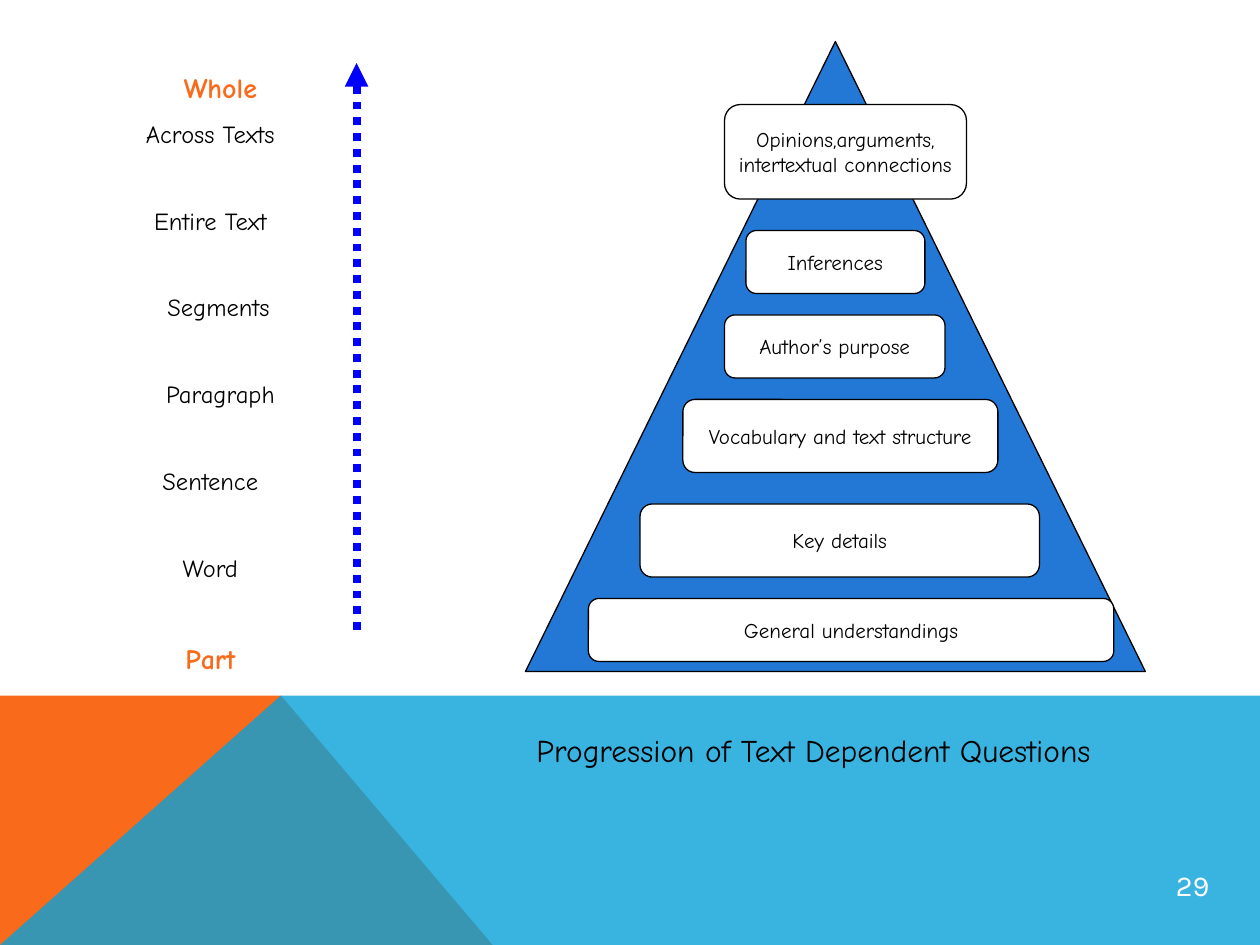
"""Build a slide on the progression of text dependent questions."""
import dataclasses

import pptx
import pptx.dml.color
import pptx.enum.dml
import pptx.enum.shapes
import pptx.enum.text
import pptx.oxml.ns
import pptx.util
from lxml import etree

Inches = pptx.util.Inches
Pt = pptx.util.Pt
SHAPE = pptx.enum.shapes.MSO_SHAPE
ALIGN = pptx.enum.text.PP_ALIGN
MIDDLE = pptx.enum.text.MSO_ANCHOR.MIDDLE


@dataclasses.dataclass(frozen=True)
class Theme:
    """Hold the colours, fonts and type sizes."""
    black: str = "000000"
    white: str = "FFFFFF"
    orange: str = "F96A1B"
    sky: str = "08A1D9"
    blue: str = "2378D5"
    arrow: str = "0000FF"
    hand: str = "Comic Neue"
    sans: str = "Karla"
    small: float = 12
    label: float = 14
    head: float = 16
    page: float = 16.5
    title: float = 18


THEME = Theme()

BOXES = [
    (5.75, 0.83, 1.92, 0.75, ["Opinions,arguments,", "intertextual connections"]),
    (5.92, 1.83, 1.42, 0.5, ["Inferences"]),
    (5.75, 2.5, 1.75, 0.5, ["Author’s purpose"]),
    (5.42, 3.17, 2.5, 0.58, ["Vocabulary and text structure"]),
    (5.08, 4, 3.17, 0.58, ["Key details"]),
    (4.67, 4.75, 4.17, 0.5, ["General understandings"]),
]

LEVELS = [
    ("Whole", 0, 0.16),
    ("Across Texts", 8.6, 0),
    ("Entire Text", 32.8, 0),
    ("Segments", 32.8, 0.13),
    ("Paragraph", 32.8, 0.16),
    ("Sentence", 32.8, 0),
    ("Word", 32.8, 0),
    ("Part", 36.3, 0),
]


def tint(code):
    """Turn a hex code into a colour."""
    return pptx.dml.color.RGBColor.from_string(code)


def apply(target, values):
    """Set each attribute of the target from a dict."""
    for name, value in values.items():
        setattr(target, name, value)


def add_node(parent, tag, **values):
    """Append a drawing element with the given attributes."""
    return etree.SubElement(parent, pptx.oxml.ns.qn(tag), values)


def paint(shape, fill=None, line=None):
    """Set the fill and outline of a shape."""
    shape.shadow.inherit = False
    if fill:
        shape.fill.solid()
        shape.fill.fore_color.rgb = tint(fill)
    else:
        shape.fill.background()
    if line:
        shape.line.color.rgb = tint(line)
        shape.line.width = Pt(0.75)
    else:
        shape.line.fill.background()


def write(para, text, size, color=THEME.black, face=THEME.hand, bold=False,
          align=ALIGN.CENTER):
    """Fill a paragraph with one styled run."""
    para.alignment = align
    run = para.add_run()
    run.text = text
    apply(run.font, {"size": Pt(size), "name": face, "bold": bold})
    run.font.color.rgb = tint(color)


def add_lines(frame, count):
    """Return the given number of paragraphs in a frame."""
    return [frame.paragraphs[0]] + [frame.add_paragraph() for _ in range(count - 1)]


def add_shape(slide, kind, place, fill=None, line=None):
    """Add a preset shape at a place in inches."""
    shape = slide.shapes.add_shape(kind, *map(Inches, place))
    paint(shape, fill, line)
    return shape


def add_band(slide, points, fill, alpha=None):
    """Add a filled outline through points in inches."""
    spots = [(Inches(x), Inches(y)) for x, y in points]
    path = slide.shapes.build_freeform(*spots[0], scale=1.0)
    path.add_line_segments(spots[1:], close=True)
    shape = path.convert_to_shape()
    paint(shape, fill)
    if alpha:
        color = shape._element.spPr.find(".//" + pptx.oxml.ns.qn("a:srgbClr"))
        add_node(color, "a:alpha", val=str(alpha * 1000))


def add_box(slide, left, top, width, height, lines):
    """Add a rounded box with centred lines."""
    box = add_shape(slide, SHAPE.ROUNDED_RECTANGLE, (left, top, width, height),
                    THEME.white, THEME.black)
    frame = box.text_frame
    apply(frame, {"word_wrap": False, "vertical_anchor": MIDDLE})
    for para, text in zip(add_lines(frame, len(lines)), lines):
        write(para, text, THEME.small)


def add_levels(slide):
    """Add the column of text levels between whole and part."""
    place = map(Inches, (0.92, 0.5, 1.5, 4.92))
    frame = slide.shapes.add_textbox(*place).text_frame
    apply(frame, {"word_wrap": True, "margin_top": Inches(0.09)})
    for para, (text, gap, shift) in zip(add_lines(frame, len(LEVELS)), LEVELS):
        ends = text in ("Whole", "Part")
        write(para, text, THEME.head if ends else THEME.label,
              THEME.orange if ends else THEME.black, bold=ends)
        apply(para, {"space_before": Pt(gap), "line_spacing": Pt(16.8)})
        para._p.get_or_add_pPr().set("marL", str(Inches(shift)))


def add_arrow(slide):
    """Add the dotted arrow that points up."""
    ends = map(Inches, (2.83, 5, 2.83, 0.5))
    arrow = slide.shapes.add_connector(pptx.enum.shapes.MSO_CONNECTOR.STRAIGHT, *ends)
    arrow.line.color.rgb = tint(THEME.arrow)
    apply(arrow.line, {"width": Pt(4.5),
                       "dash_style": pptx.enum.dml.MSO_LINE.ROUND_DOT})
    add_node(arrow.line._get_or_add_ln(), "a:tailEnd", type="triangle")
    add_node(arrow._element.spPr, "a:effectLst")


def add_title(slide):
    """Add the slide title."""
    place = map(Inches, (4.16, 5.75, 5.5, 0.4))
    frame = slide.shapes.add_textbox(*place).text_frame
    frame.word_wrap = True
    write(frame.paragraphs[0], "Progression of Text Dependent Questions",
          THEME.title, align=ALIGN.LEFT)


def add_page(slide):
    """Add the page number in its circle."""
    frame = add_shape(slide, SHAPE.OVAL, (9.19, 6.75, 0.55, 0.55)).text_frame
    sides = ("left", "top", "right", "bottom")
    apply(frame, {f"margin_{side}": Inches(0.01) for side in sides})
    apply(frame, {"vertical_anchor": MIDDLE, "word_wrap": True})
    write(frame.paragraphs[0], "29", THEME.page, THEME.white, THEME.sans)


def main():
    """Build and save the slide."""
    deck = pptx.Presentation()
    apply(deck, {"slide_width": Inches(10), "slide_height": Inches(7.5)})
    slide = deck.slides.add_slide(deck.slide_layouts[6])
    add_band(slide, [(0, 7.5), (0, 5.52), (2.23, 5.52), (3.91, 7.5)], THEME.orange)
    add_band(slide, [(0, 7.5), (2.23, 5.52), (10, 5.52), (10, 7.5)], THEME.sky, 80)
    add_levels(slide)
    add_arrow(slide)
    add_shape(slide, SHAPE.ISOSCELES_TRIANGLE, (4.17, 0.33, 4.92, 5),
              THEME.blue, THEME.black)
    for box in BOXES:
        add_box(slide, *box)
    add_page(slide)
    add_title(slide)
    deck.save("out.pptx")


if __name__ == "__main__":
    main()
